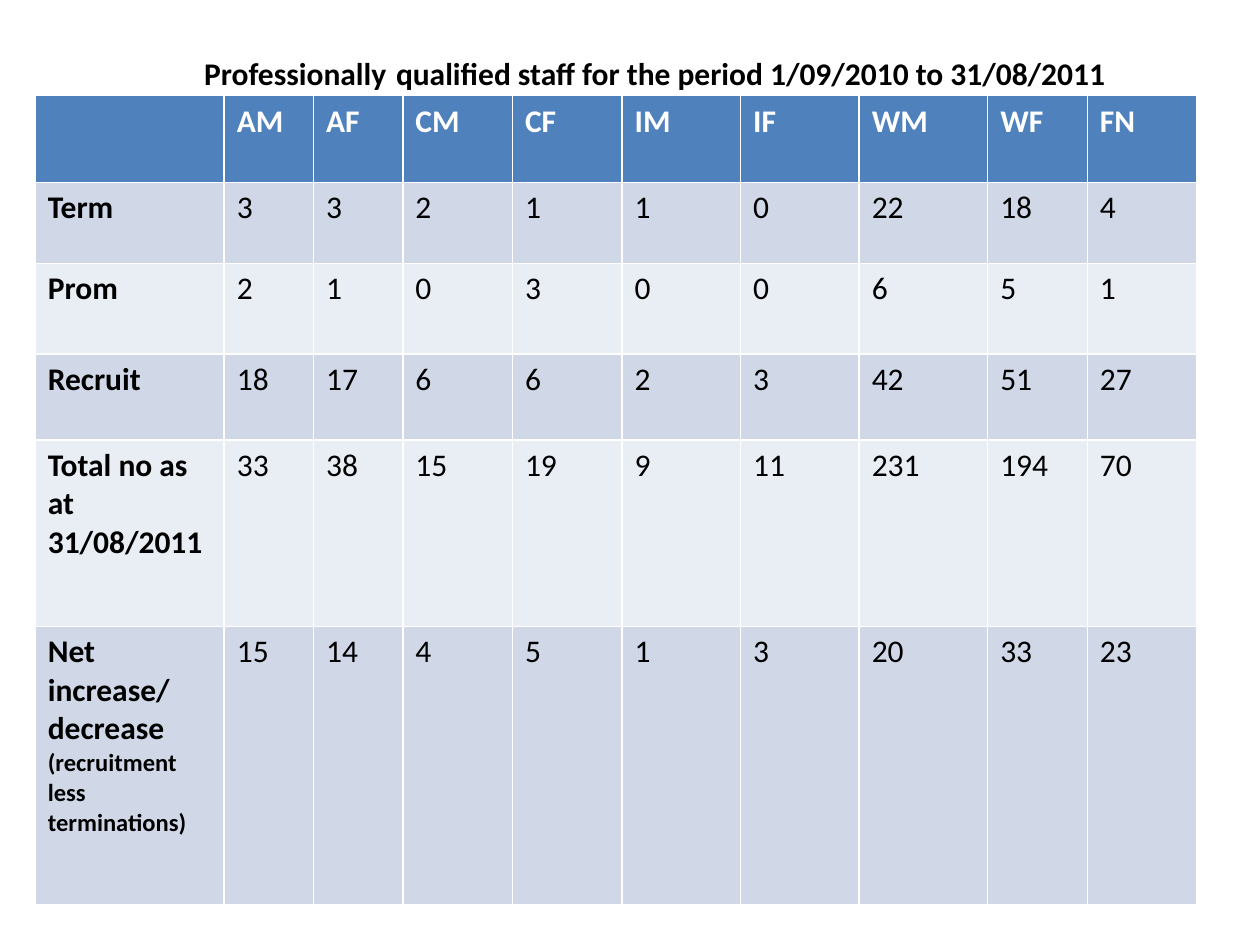
from pptx import Presentation
from pptx import util as u
from pptx.dml.color import RGBColor
from pptx.enum import text

BLACK = RGBColor(0x00, 0x00, 0x00)
WHITE = RGBColor(0xFF, 0xFF, 0xFF)
BLUE = RGBColor(0x4F, 0x81, 0xBD)
BANDS = [RGBColor(0xE9, 0xED, 0xF4), RGBColor(0xD0, 0xD8, 0xE8)]

ROWS = [
    ["", "AM", "AF", "CM", "CF", "IM", "IF", "WM", "WF", "FN"],
    ["Term", 3, 3, 2, 1, 1, 0, 22, 18, 4],
    ["Prom", 2, 1, 0, 3, 0, 0, 6, 5, 1],
    ["Recruit", 18, 17, 6, 6, 2, 3, 42, 51, 27],
    ["Total no as at 31/08/2011", 33, 38, 15, 19, 9, 11, 231, 194, 70],
    ["Net increase/ decrease ", 15, 14, 4, 5, 1, 3, 20, 33, 23],
]
WIDTHS = [3.81, 1.8, 1.8, 2.21, 2.21, 2.39, 2.39, 2.59, 2.01, 2.21]
HEIGHTS = [1.75, 1.63, 1.83, 1.73, 3.76, 5.61]


def style(run, size, color, bold):
    run.font.name = "Calibri"
    run.font.size = u.Pt(size)
    run.font.bold = bold
    run.font.color.rgb = color


prs = Presentation()
prs.slide_width, prs.slide_height = u.Cm(25.4), u.Cm(19.05)
slide = prs.slides.add_slide(prs.slide_layouts[5])

# Title, with a larger space after the first word
title = slide.shapes.title
title.left, title.top = u.Cm(1.7), u.Cm(0.74)
title.width, title.height = u.Cm(23.01), u.Cm(1.27)
frame = title.text_frame
frame.word_wrap = True
frame.auto_size = text.MSO_AUTO_SIZE.NONE
frame.vertical_anchor = text.MSO_ANCHOR.TOP
para = frame.paragraphs[0]
para.alignment = text.PP_ALIGN.CENTER
for words, size in [
    ("Professionally", 18),
    (" ", 24),
    ("qualified staff for the period 1/09/2010 to 31/08/2011", 18),
]:
    run = para.add_run()
    run.text = words
    style(run, size, BLACK, True)

# Table: its default style draws the white borders
table = slide.shapes.add_table(
    len(ROWS), len(WIDTHS), u.Cm(0.71), u.Cm(1.93),
    u.Cm(sum(WIDTHS)), u.Cm(sum(HEIGHTS))).table
for col, width in zip(table.columns, WIDTHS):
    col.width = u.Cm(width)
for row, height in zip(table.rows, HEIGHTS):
    row.height = u.Cm(height)

# Cells: blue header, then two bands
for r, values in enumerate(ROWS):
    for c, value in enumerate(values):
        cell = table.cell(r, c)
        cell.text_frame.text = str(value)
        cell.fill.solid()
        cell.fill.fore_color.rgb = BANDS[r % 2] if r else BLUE
        for run in cell.text_frame.paragraphs[0].runs:
            style(run, 18, BLACK if r else WHITE, r == 0 or c == 0)

# Smaller remark in the last row label
note = table.cell(len(ROWS) - 1, 0).text_frame.paragraphs[0].add_run()
note.text = "(recruitment less terminations)"
style(note, 14, BLACK, True)

prs.save("out.pptx")
